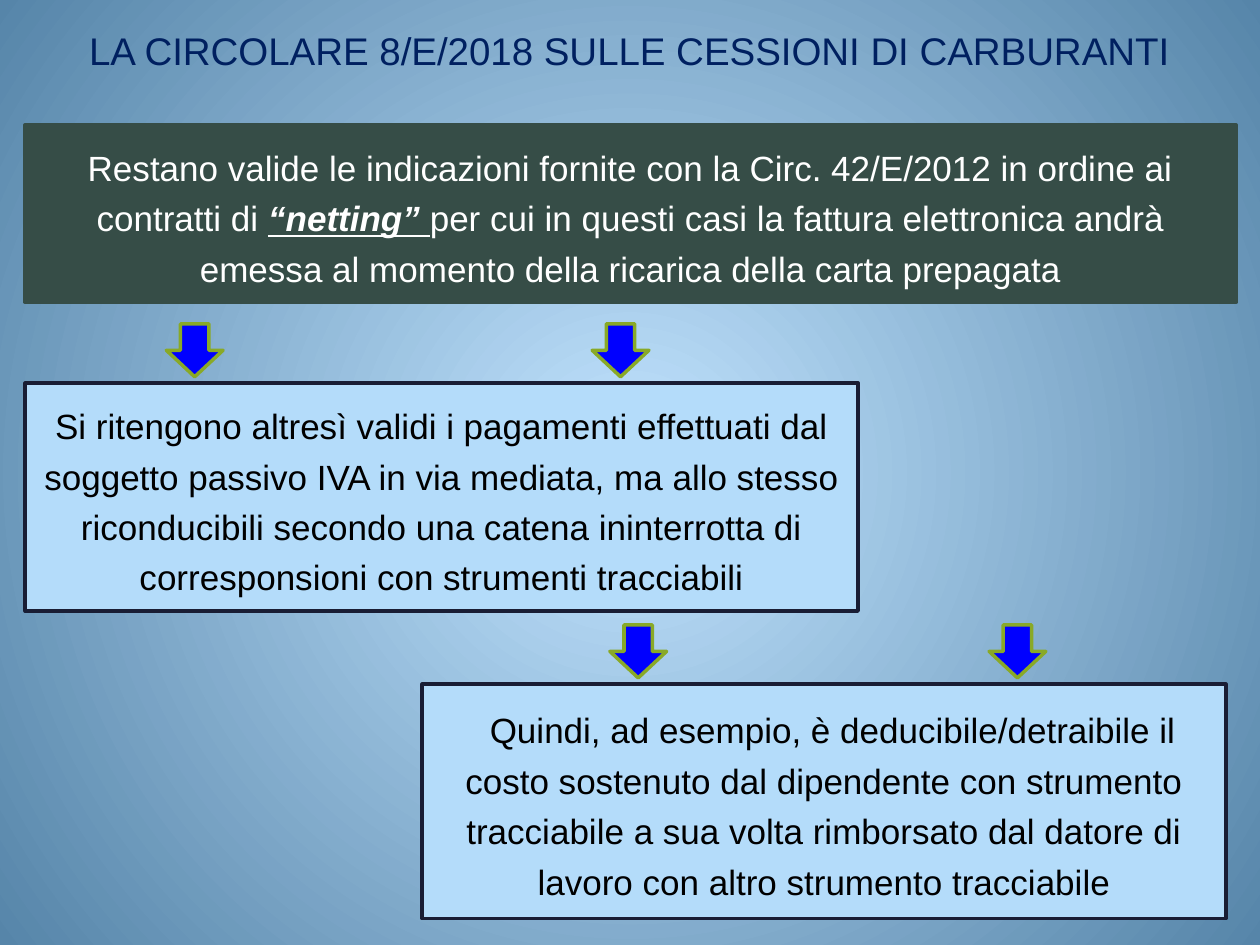
from lxml import etree
from pptx import Presentation
from pptx.dml.color import RGBColor
from pptx.enum.shapes import MSO_SHAPE
from pptx.enum.text import MSO_ANCHOR, PP_ALIGN
from pptx.oxml.ns import qn
from pptx.util import Inches, Pt

RECTANGLE = MSO_SHAPE.RECTANGLE
DOWN_ARROW = MSO_SHAPE.DOWN_ARROW
MIDDLE = MSO_ANCHOR.MIDDLE
CENTER = PP_ALIGN.CENTER

COLORS = {
    "glow": "C2E4FF",
    "edge": "5685A9",
    "title": "002060",
    "rule": "364D47",
    "panel": "B4DCFA",
    "panel_line": "191D34",
    "arrow": "0000FF",
    "arrow_line": "89A927",
    "white": "FFFFFF",
    "black": "000000",
}
BODY = {"size": Pt(20), "name": "Arial"}
HEADING = {"size": Pt(22), "name": "Arial"}
EMPHASIS = {"bold": True, "italic": True, "underline": True}
ARROW_WIDTH, ARROW_HEIGHT, ARROW_RISE = 0.45, 0.42, 0.47


def rgb(key):
    return RGBColor.from_string(COLORS[key])


def paint_background(slide):
    fill = slide.background.fill
    fill.gradient()
    for stop, key, position in zip(fill.gradient_stops, ("glow", "edge"), (0, 1)):
        stop.color.rgb = rgb(key)
        stop.position = position
    linear = next(slide.element.iter(qn("a:lin")))
    gradient = linear.getparent()
    gradient.remove(linear)
    radial = etree.SubElement(gradient, qn("a:path"), path="circle")
    center = dict.fromkeys("ltrb", "50000")
    etree.SubElement(radial, qn("a:fillToRect"), center)


def write_text(frame, runs, color, style, indent=0):
    frame.word_wrap = True
    frame.vertical_anchor = MIDDLE
    paragraph = frame.paragraphs[0]
    paragraph.alignment = CENTER
    paragraph.line_spacing = 1.2
    if indent:
        paragraph._p.get_or_add_pPr().set("indent", str(Inches(indent)))
    for words, extra in runs:
        run = paragraph.add_run()
        run.text = words
        run.font.color.rgb = rgb(color)
        for attribute, value in {**style, **extra}.items():
            setattr(run.font, attribute, value)


def add_outlined(slide, kind, box, fill, line):
    shape = slide.shapes.add_shape(kind, *map(Inches, box))
    shape.shadow.inherit = False
    shape.fill.solid()
    shape.fill.fore_color.rgb = rgb(fill)
    shape.line.color.rgb = rgb(line)
    shape.line.width = Pt(2)
    return shape


def add_title(slide, box, words):
    title = slide.shapes.add_textbox(*map(Inches, box))
    write_text(title.text_frame, [(words, {})], "title", HEADING)


def add_statement(slide, box, runs, fill, line, color, arrows=(), indent=0):
    statement = add_outlined(slide, RECTANGLE, box, fill, line)
    write_text(statement.text_frame, runs, color, BODY, indent)
    left, top = box[:2]
    for offset in arrows:
        arrow_box = (left + offset, top - ARROW_RISE, ARROW_WIDTH, ARROW_HEIGHT)
        add_outlined(slide, DOWN_ARROW, arrow_box, "arrow", "arrow_line")


def main():
    deck = Presentation()
    deck.slide_width, deck.slide_height = Inches(10), Inches(7.5)
    slide = deck.slides.add_slide(deck.slide_layouts[6])
    paint_background(slide)
    add_title(
        slide,
        (0.35, 0.13, 9.29, 0.47),
        "LA CIRCOLARE 8/E/2018 SULLE CESSIONI DI CARBURANTI",
    )
    netting = [
        ("Restano valide le indicazioni fornite con la Circ. 42/E/2012 "
         "in ordine ai contratti di ", {}),
        ("“netting” ", EMPHASIS),
        ("per cui in questi casi la fattura elettronica andrà emessa "
         "al momento della ricarica della carta prepagata", {}),
    ]
    payments = [
        ("Si ritengono altresì validi i pagamenti effettuati dal soggetto "
         "passivo IVA in via mediata, ma allo stesso riconducibili secondo "
         "una catena ininterrotta di corresponsioni con strumenti tracciabili", {}),
    ]
    example = [
        ("Quindi, ad esempio, è deducibile/detraibile il costo sostenuto dal "
         "dipendente con strumento tracciabile a sua volta rimborsato dal "
         "datore di lavoro con altro strumento tracciabile", {}),
    ]
    panel = ("panel", "panel_line", "black")
    add_statement(slide, (0.2, 0.99, 9.61, 1.41), netting, "rule", "rule", "white")
    add_statement(slide, (0.2, 3.04, 6.61, 1.81), payments, *panel, arrows=(1.12, 4.5))
    add_statement(
        slide, (3.35, 5.43, 6.38, 1.86), example, *panel, arrows=(1.49, 4.5), indent=0.14
    )
    deck.save("out.pptx")


if __name__ == "__main__":
    main()
